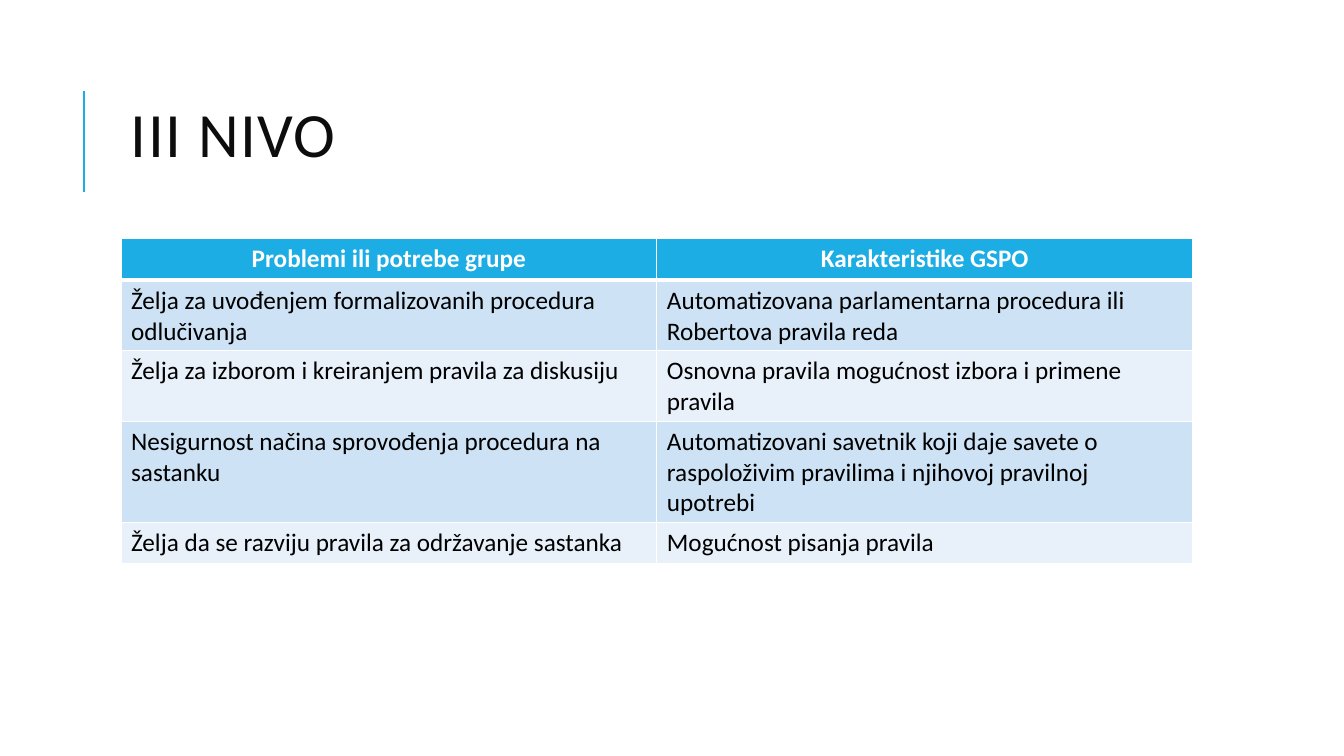
from collections import namedtuple
from dataclasses import dataclass

from lxml.etree import SubElement
from pptx import Presentation
from pptx.dml.color import RGBColor
from pptx.enum.shapes import MSO_CONNECTOR
from pptx.enum.text import MSO_ANCHOR, PP_ALIGN
from pptx.oxml.ns import qn
from pptx.util import Inches, Pt

Box = namedtuple("Box", "left top width height")


@dataclass(frozen=True)
class Theme:
    font: str = "Calibri"
    accent: str = "1CADE4"
    title: str = "0D0D0D"
    text: str = "000000"
    white: str = "FFFFFF"
    bands: tuple = ("CDE3F5", "E8F1FA")
    title_size: int = 45
    table_size: int = 18


THEME = Theme()
TITLE_BOX = Box(1.2, 1.08, 10.63, 0.6)
TABLE_BOX = Box(1.2, 2.37, 10.63, 2.05)
ROWS = [
    ("Problemi ili potrebe grupe", "Karakteristike GSPO"),
    ("Želja za uvođenjem formalizovanih procedura odlučivanja",
     "Automatizovana parlamentarna procedura ili Robertova pravila reda"),
    ("Želja za izborom i kreiranjem pravila za diskusiju",
     "Osnovna pravila mogućnost izbora i primene pravila"),
    ("Nesigurnost načina sprovođenja procedura na sastanku",
     "Automatizovani savetnik koji daje savete o raspoloživim pravilima "
     "i njihovoj pravilnoj upotrebi"),
    ("Želja da se razviju pravila za održavanje sastanka",
     "Mogućnost pisanja pravila"),
]


def add_run(para, text, size, color, bold=False):
    run = para.add_run()
    run.text = text
    run.font.name = THEME.font
    run.font.size = Pt(size)
    run.font.bold = bold
    run.font.color.rgb = RGBColor.from_string(color)
    return run


def add_title(page, box, text):
    """Places the title and the accent line to its left."""
    line_x = Inches(box.left - 0.37)
    middle = box.top + box.height / 2 + 0.02
    line = page.shapes.add_connector(
        MSO_CONNECTOR.STRAIGHT,
        line_x, Inches(middle + 0.5), line_x, Inches(middle - 0.5))
    line.line.color.rgb = RGBColor.from_string(THEME.accent)
    line.line.width = Pt(1.5)
    SubElement(line._element.spPr, qn("a:effectLst"))

    frame = page.shapes.add_textbox(*map(Inches, box)).text_frame
    frame.word_wrap = True
    frame.vertical_anchor = MSO_ANCHOR.MIDDLE
    para = frame.paragraphs[0]
    para.line_spacing = 0.8
    run = add_run(para, text, THEME.title_size, THEME.title)
    run.font._element.set("spc", "100")


def set_borders(cell, bottom_width):
    """Draws white borders; call before the fill is set."""
    properties = cell._tc.get_or_add_tcPr()
    for side, width in (("L", 1), ("R", 1), ("T", 1), ("B", bottom_width)):
        border = SubElement(properties, qn(f"a:ln{side}"), w=str(Pt(width)))
        fill = SubElement(border, qn("a:solidFill"))
        SubElement(fill, qn("a:srgbClr"), val=THEME.white)


def add_table(page, box, rows):
    table = page.shapes.add_table(
        len(rows), len(rows[0]), *map(Inches, box)).table
    for row_index, texts in enumerate(rows):
        header = row_index == 0
        fill = THEME.accent if header else THEME.bands[(row_index - 1) % 2]
        for column_index, text in enumerate(texts):
            cell = table.cell(row_index, column_index)
            set_borders(cell, 3 if header else 1)
            cell.fill.solid()
            cell.fill.fore_color.rgb = RGBColor.from_string(fill)
            para = cell.text_frame.paragraphs[0]
            para.alignment = PP_ALIGN.CENTER if header else PP_ALIGN.LEFT
            add_run(para, text, THEME.table_size,
                    THEME.white if header else THEME.text, bold=header)


def main():
    deck = Presentation()
    deck.slide_width = Inches(13.33)
    deck.slide_height = Inches(7.5)
    page = deck.slides.add_slide(deck.slide_layouts[6])
    add_title(page, TITLE_BOX, "III NIVO")
    add_table(page, TABLE_BOX, ROWS)
    deck.save("out.pptx")


if __name__ == "__main__":
    main()
